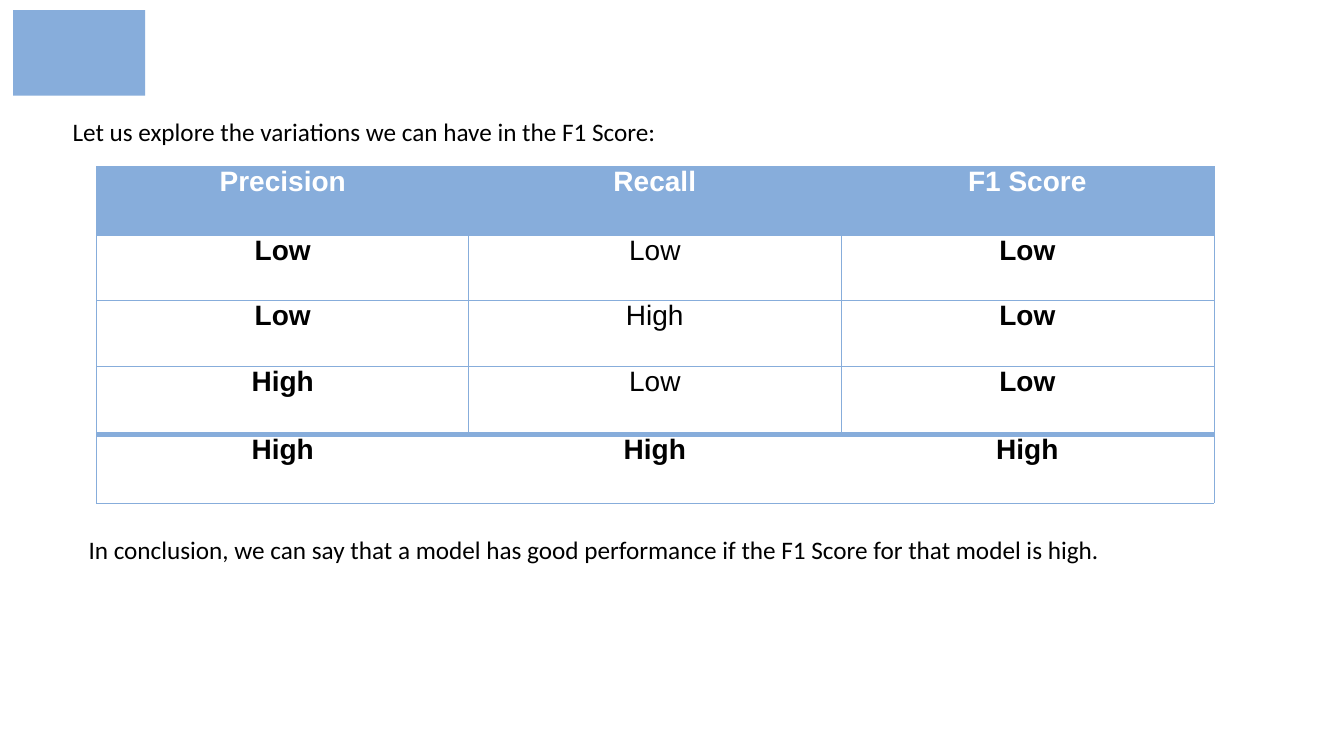
"""Build a slide on how precision and recall shape the F1 Score."""
import pptx
import pptx.dml.color
import pptx.enum.shapes
import pptx.enum.text
import pptx.oxml
import pptx.oxml.ns
import pptx.util

Inches = pptx.util.Inches
RGB = pptx.dml.color.RGBColor.from_string

THEME = {
    "blue": "87ADDB", "white": "FFFFFF", "black": "000000",
    "body": {"name": "Calibri", "size": pptx.util.Pt(18)},
    "cell": {"name": "Arial", "size": pptx.util.Pt(20)},
    "thin": 0.5, "thick": 4,
}
NOTES = [
    ("Let us explore the variations we can have in the F1 Score:",
     (0.44, 1.1, 6.23, 0.4), 0.28),
    ("In conclusion, we can say that a model has good performance "
     "if the F1 Score for that model is high.",
     (0.78, 5.25, 11.87, 0.4), 0.1),
]
ROWS = [
    ("Precision", "Recall", "F1 Score"),
    ("Low", "Low", "Low"),
    ("Low", "High", "Low"),
    ("High", "Low", "Low"),
    ("High", "High", "High"),
]
WIDTHS = (3.69, 3.69, 3.7)
HEIGHTS = (0.68, 0.65, 0.65, 0.68, 0.68)
TABLE = (0.96, 1.65, sum(WIDTHS), sum(HEIGHTS))
BADGE = (0.13, 0.1, 1.31, 0.85)
LAST = len(ROWS) - 1
END = len(WIDTHS) - 1


def apply(item, values):
    for key, value in values.items():
        setattr(item, key, value)


def place(box):
    return [Inches(part) for part in box]


def style(font, values, color, bold=False):
    apply(font, {**values, "bold": bold})
    font.color.rgb = RGB(color)


def edge(cell, side, width):
    paint = (f'<a:solidFill><a:srgbClr val="{THEME["blue"]}"/></a:solidFill>'
             if width else "<a:noFill/>")
    line = (f'<a:ln{side} {pptx.oxml.ns.nsdecls("a")} '
            f'w="{pptx.util.Pt(width)}">{paint}</a:ln{side}>')
    cell._tc.get_or_add_tcPr().append(pptx.oxml.parse_xml(line))


def edges(row, col):
    thin, thick = THEME["thin"], THEME["thick"]
    inner = 0 if row == LAST else thin
    return {
        "L": inner if col else thin,
        "R": inner if col < END else thin,
        "T": thick if row == LAST else thin,
        "B": thick if row == LAST - 1 else thin,
    }


def badge(slide):
    kind = pptx.enum.shapes.MSO_SHAPE.RECTANGLE
    shape = slide.shapes.add_shape(kind, *place(BADGE))
    shape.shadow.inherit = False
    shape.fill.solid()
    shape.fill.fore_color.rgb = RGB(THEME["blue"])
    shape.line.fill.background()


def note(slide, text, box, inset):
    frame = slide.shapes.add_textbox(*place(box)).text_frame
    apply(frame, {"word_wrap": True, "margin_left": Inches(inset),
                  "margin_right": 0, "text": text})
    style(frame.paragraphs[0].font, THEME["body"], THEME["black"])


def fill(cell, text, row, col):
    head = row == 0
    for side, width in edges(row, col).items():
        edge(cell, side, width)
    cell.fill.solid()
    cell.fill.fore_color.rgb = RGB(THEME["blue" if head else "white"])
    apply(cell, {"margin_left": 0, "margin_right": 0, "margin_top": 0,
                 "margin_bottom": 0, "text": text})
    line = cell.text_frame.paragraphs[0]
    line.alignment = pptx.enum.text.PP_ALIGN.CENTER
    bold = col != 1 or row in (0, LAST)
    style(line.font, THEME["cell"], THEME["white" if head else "black"], bold)


def grid(slide):
    table = slide.shapes.add_table(
        len(ROWS), len(WIDTHS), *place(TABLE)).table
    apply(table, {"first_row": False, "horz_banding": False})
    for col, width in zip(table.columns, WIDTHS):
        col.width = Inches(width)
    for row, height in zip(table.rows, HEIGHTS):
        row.height = Inches(height)
    for row, texts in enumerate(ROWS):
        for col, text in enumerate(texts):
            fill(table.cell(row, col), text, row, col)


def main():
    deck = pptx.Presentation()
    apply(deck, {"slide_width": Inches(13.33), "slide_height": Inches(7.5)})
    slide = deck.slides.add_slide(deck.slide_layouts[6])
    badge(slide)
    grid(slide)
    for text, box, inset in NOTES:
        note(slide, text, box, inset)
    deck.save("out.pptx")


if __name__ == "__main__":
    main()
